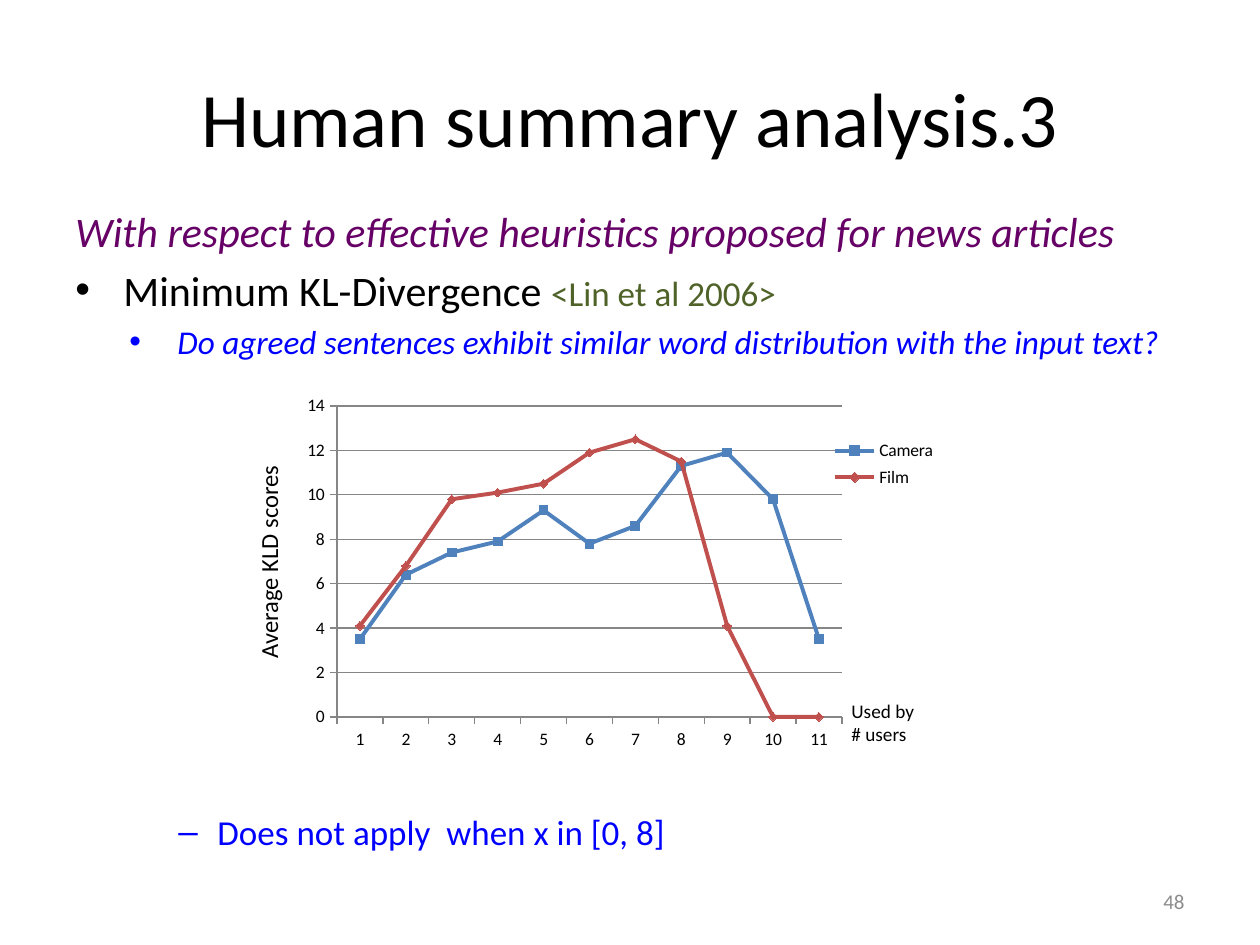
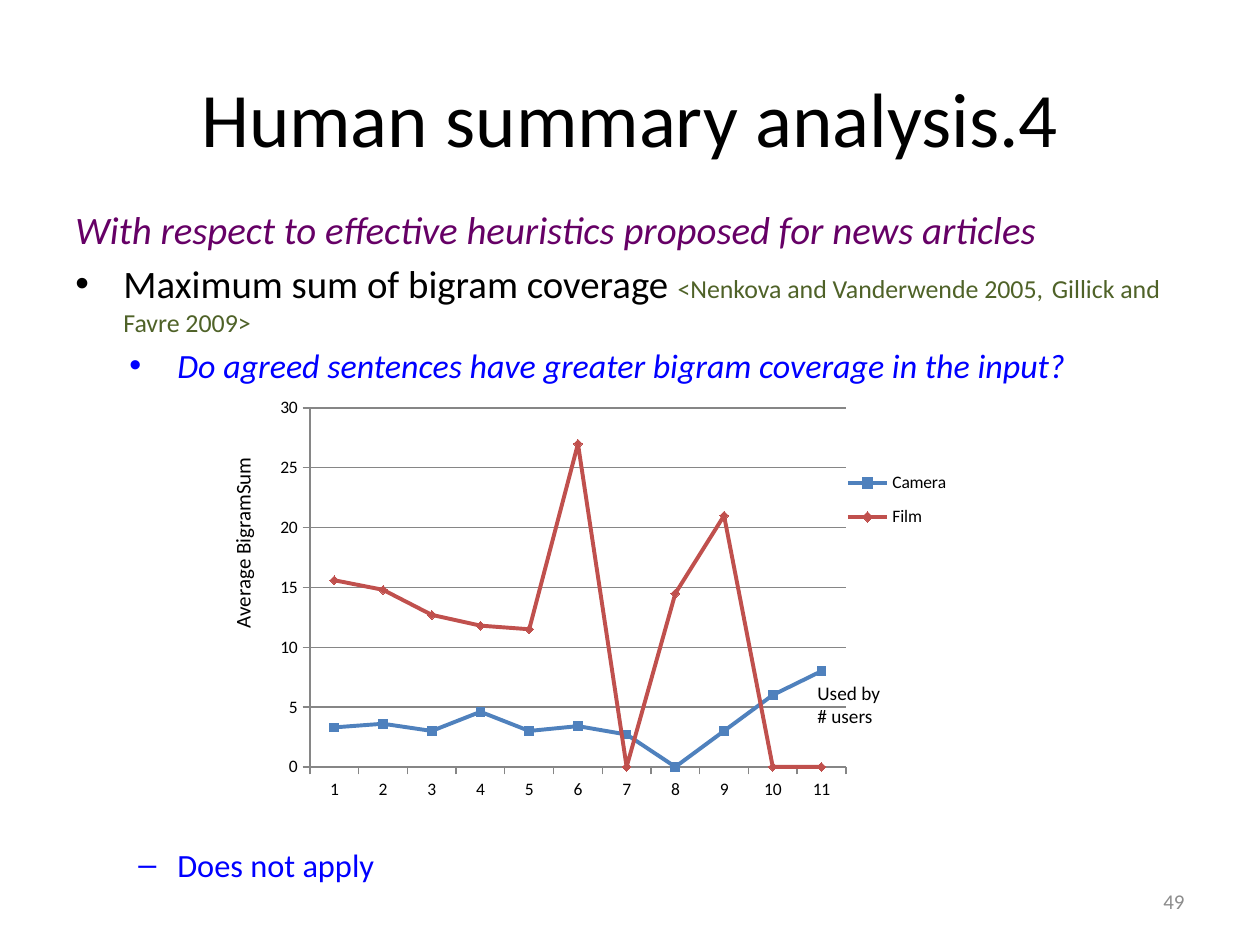
from dataclasses import dataclass

from lxml import etree
from pptx import Presentation
from pptx.chart.data import CategoryChartData
from pptx.dml.color import RGBColor
from pptx.enum.chart import XL_CHART_TYPE, XL_LEGEND_POSITION, XL_MARKER_STYLE, XL_TICK_MARK
from pptx.enum.text import MSO_ANCHOR, PP_ALIGN
from pptx.oxml.ns import qn
from pptx.util import Pt

LEFT, CENTER, RIGHT = PP_ALIGN.LEFT, PP_ALIGN.CENTER, PP_ALIGN.RIGHT
TOP, MIDDLE = MSO_ANCHOR.TOP, MSO_ANCHOR.MIDDLE
LINE_MARKERS = XL_CHART_TYPE.LINE_MARKERS
LEGEND_RIGHT = XL_LEGEND_POSITION.RIGHT
TICK_OUT = XL_TICK_MARK.OUTSIDE
MARKERS = (XL_MARKER_STYLE.SQUARE, XL_MARKER_STYLE.DIAMOND)


@dataclass(frozen=True)
class Theme:
    font: str = "Calibri"
    ink: str = "000000"
    lead: str = "660066"
    cite: str = "4F6228"
    accent: str = "0000FF"
    page: str = "8C8C8C"
    grid: str = "868686"
    series: tuple = ("4F81BD", "C0504D")
    title_size: float = 44
    page_size: float = 12
    chart_size: float = 10
    note_size: float = 11
    line_width: float = 2.25
    grid_width: float = 0.75
    marker_size: int = 5
    space_ratio: float = 0.2


THEME = Theme()
EMU_PER_PX = 914400 / 126
SLIDE_SIZE = (1260, 945)
TITLE_BOX = (63, 38, 1134, 158)
PAGE_BOX = (903, 876, 294, 50)

LEAD_TEXT = "With respect to effective heuristics proposed for news articles"
USERS_NOTE = ("Used by", "# users")
USER_COUNTS = [str(n) for n in range(1, 12)]
BULLET = {"char": "•", "margin": 48, "hang": 48}
SUB_BULLET = {"char": "•", "margin": 102, "hang": 48}

SLIDES = [
    {
        "title": "Human summary analysis.3",
        "page": "48",
        "body_box": (63, 199, 1150, 180),
        "lead_size": 24,
        "heuristic": [
            ("Minimum KL-Divergence ", 24, THEME.ink),
            ("<Lin et al 2006>", 20, THEME.cite),
        ],
        "question": "Do agreed sentences exhibit similar word distribution with the input text?",
        "question_size": 19,
        "finding": "Does not apply  when x in [0, 8]",
        "finding_size": 20,
        "finding_box": (63, 804, 1150, 56),
        "finding_margin": 142,
        "chart_box": (294, 388, 683, 368),
        "plot_box": (337, 406, 505, 311),
        "legend_box": (828, 434, 112, 60),
        "axis_max": 14,
        "axis_step": 2,
        "scores": {
            "Camera": [3.5, 6.4, 7.4, 7.9, 9.3, 7.8, 8.6, 11.3, 11.9, 9.8, 3.5],
            "Film": [4.1, 6.8, 9.8, 10.1, 10.5, 11.9, 12.5, 11.5, 4.1, 0, 0],
        },
        "axis_label": "Average KLD scores",
        "axis_label_size": 14,
        "axis_label_box": (152, 527, 239, 48),
        "note_box": (839, 693, 117, 63),
    },
    {
        "title": "Human summary analysis.4",
        "page": "49",
        "body_box": (63, 199, 1134, 200),
        "lead_size": 22.2,
        "heuristic": [
            ("Maximum sum of bigram coverage ", 22.2, THEME.ink),
            ("<Nenkova and Vanderwende 2005,", 14.8, THEME.cite),
            (" ", 22.2, THEME.cite),
            ("Gillick and Favre 2009>", 14.8, THEME.cite),
        ],
        "question": "Do agreed sentences have greater bigram coverage in the input?",
        "question_size": 19.4,
        "finding": "Does not apply",
        "finding_size": 18.5,
        "finding_box": (63, 839, 1134, 52),
        "finding_margin": 102,
        "chart_box": (266, 389, 714, 417),
        "plot_box": (310, 408, 536, 359),
        "legend_box": (841, 459, 112, 82),
        "axis_max": 30,
        "axis_step": 5,
        "scores": {
            "Camera": [3.3, 3.6, 3, 4.6, 3, 3.4, 2.7, 0, 3, 6, 8],
            "Film": [15.6, 14.8, 12.7, 11.8, 11.5, 27, 0, 14.5, 21, 0, 0],
        },
        "axis_label": "Average BigramSum",
        "axis_label_size": 12,
        "axis_label_box": (136, 510, 218, 43),
        "note_box": (805, 675, 111, 66),
    },
]


def px(value):
    return round(value * EMU_PER_PX)


def rgb(color):
    return RGBColor.from_string(color)


def para(runs, italic=False, bullet=None, spaced=False):
    return {"runs": runs, "italic": italic, "bullet": bullet, "spaced": spaced}


def set_bullet(p, bullet):
    pPr = p._p.get_or_add_pPr()
    pPr.set("marL", str(px(bullet["margin"])))
    pPr.set("indent", str(-px(bullet["hang"])))
    etree.SubElement(pPr, qn("a:buFont")).set("typeface", "Arial")
    etree.SubElement(pPr, qn("a:buChar")).set("char", bullet["char"])


def add_text(s, box, paras, align=LEFT, anchor=TOP, rotation=0):
    sp = s.shapes.add_textbox(*map(px, box))
    sp.rotation = rotation
    tf = sp.text_frame
    tf.word_wrap = True
    tf.vertical_anchor = anchor
    for i, item in enumerate(paras):
        p = tf.add_paragraph() if i else tf.paragraphs[0]
        p.alignment = align
        if item["spaced"]:
            p.space_before = Pt(item["runs"][0][1] * THEME.space_ratio)
        if item["bullet"]:
            set_bullet(p, item["bullet"])
        for text, size, color in item["runs"]:
            r = p.add_run()
            r.text = text
            r.font.name = THEME.font
            r.font.size = Pt(size)
            r.font.italic = item["italic"]
            r.font.color.rgb = rgb(color)


def make_layout(box, frame, inner=False):
    layout = etree.Element(qn("c:layout"))
    manual = etree.SubElement(layout, qn("c:manualLayout"))
    left, top, width, height = frame
    fractions = {
        "x": (box[0] - left) / width,
        "y": (box[1] - top) / height,
        "w": box[2] / width,
        "h": box[3] / height,
    }
    settings = {"layoutTarget": "inner"} if inner else {}
    settings.update(xMode="edge", yMode="edge")
    settings.update({key: f"{value:.4f}" for key, value in fractions.items()})
    for key, value in settings.items():
        etree.SubElement(manual, qn(f"c:{key}")).set("val", value)
    return layout


def place_chart_parts(chart, data):
    plot_area = chart.element.find(".//" + qn("c:plotArea"))
    legend = chart.element.find(".//" + qn("c:legend"))
    for part in (plot_area, legend):
        for old in part.findall(qn("c:layout")):
            part.remove(old)
    frame = data["chart_box"]
    plot_area.insert(0, make_layout(data["plot_box"], frame, inner=True))
    legend.find(qn("c:legendPos")).addnext(make_layout(data["legend_box"], frame))


def style_line(line, color, width):
    line.color.rgb = rgb(color)
    line.width = Pt(width)


def add_score_chart(s, data):
    chart_data = CategoryChartData()
    chart_data.categories = USER_COUNTS
    for name, values in data["scores"].items():
        chart_data.add_series(name, values)
    chart = s.shapes.add_chart(LINE_MARKERS, *map(px, data["chart_box"]), chart_data).chart
    chart.has_title = False
    chart.font.name = THEME.font
    chart.font.size = Pt(THEME.chart_size)
    chart.font.color.rgb = rgb(THEME.ink)
    chart.has_legend = True
    chart.legend.position = LEGEND_RIGHT
    chart.legend.include_in_layout = False
    place_chart_parts(chart, data)

    for axis in (chart.category_axis, chart.value_axis):
        axis.major_tick_mark = TICK_OUT
        style_line(axis.format.line, THEME.grid, THEME.grid_width)
    axis = chart.value_axis
    axis.minimum_scale = 0
    axis.maximum_scale = data["axis_max"]
    axis.major_unit = data["axis_step"]
    axis.has_major_gridlines = True
    style_line(axis.major_gridlines.format.line, THEME.grid, THEME.grid_width)

    plot = chart.plots[0]
    plot.vary_by_categories = False
    for series, color, marker in zip(plot.series, THEME.series, MARKERS):
        series.smooth = False
        style_line(series.format.line, color, THEME.line_width)
        series.marker.style = marker
        series.marker.size = THEME.marker_size
        series.marker.format.fill.solid()
        series.marker.format.fill.fore_color.rgb = rgb(color)
        series.marker.format.line.color.rgb = rgb(color)


def add_frame(s, data):
    title = para([(data["title"], THEME.title_size, THEME.ink)])
    page = para([(data["page"], THEME.page_size, THEME.page)])
    add_text(s, TITLE_BOX, [title], CENTER, MIDDLE)
    add_text(s, PAGE_BOX, [page], RIGHT, MIDDLE)


def add_analysis(s, data):
    question = (data["question"], data["question_size"], THEME.accent)
    add_text(s, data["body_box"], [
        para([(LEAD_TEXT, data["lead_size"], THEME.lead)], italic=True),
        para(data["heuristic"], bullet=BULLET, spaced=True),
        para([question], italic=True, bullet=SUB_BULLET, spaced=True),
    ])
    dash = {"char": "–", "margin": data["finding_margin"], "hang": 39}
    finding = (data["finding"], data["finding_size"], THEME.accent)
    add_text(s, data["finding_box"], [para([finding], bullet=dash)])


def add_chart_labels(s, data):
    label = (data["axis_label"], data["axis_label_size"], THEME.ink)
    add_text(s, data["axis_label_box"], [para([label])], rotation=270)
    note = [para([(line, THEME.note_size, THEME.ink)]) for line in USERS_NOTE]
    add_text(s, data["note_box"], note)


def main():
    prs = Presentation()
    prs.slide_width, prs.slide_height = map(px, SLIDE_SIZE)
    for data in SLIDES:
        s = prs.slides.add_slide(prs.slide_layouts[6])
        add_frame(s, data)
        add_analysis(s, data)
        add_score_chart(s, data)
        add_chart_labels(s, data)
    prs.save("out.pptx")


if __name__ == "__main__":
    main()
